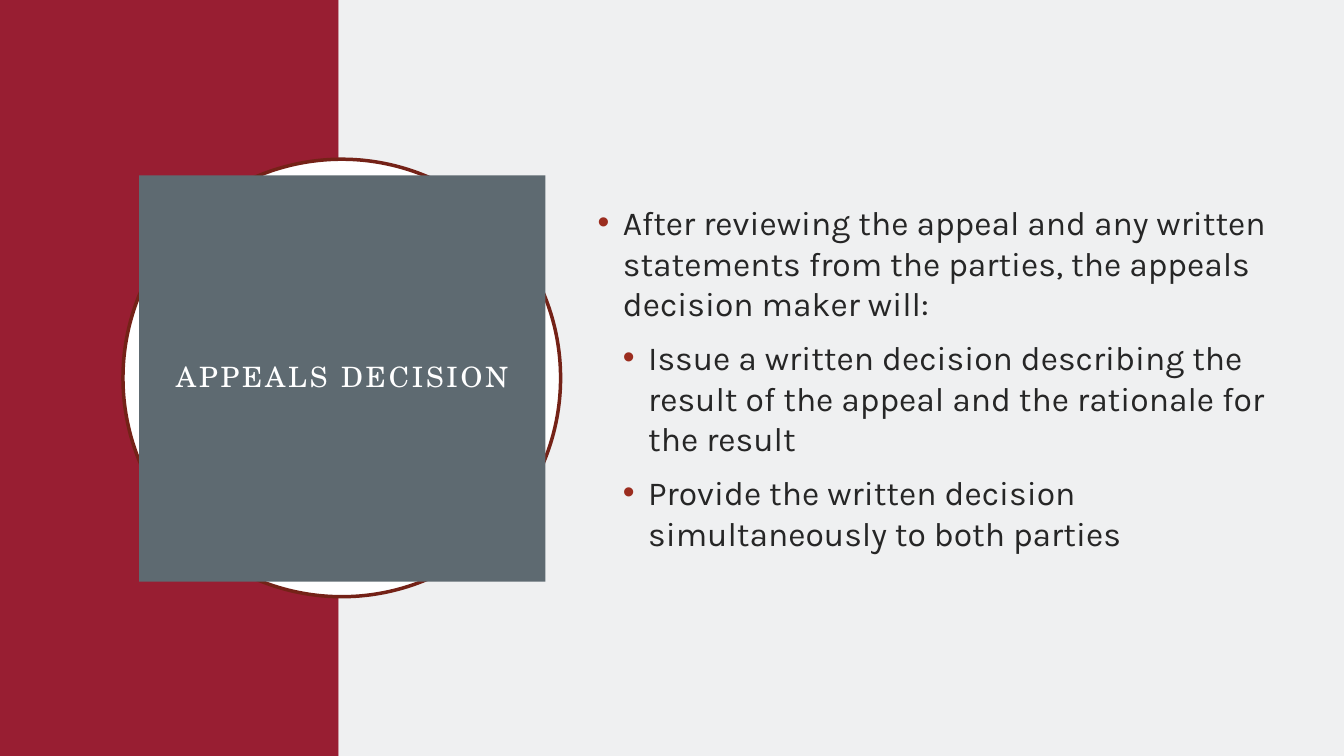
from lxml import etree
from pptx import Presentation
from pptx.dml.color import RGBColor
from pptx.enum.shapes import MSO_SHAPE
from pptx.enum.text import MSO_ANCHOR, PP_ALIGN
from pptx.oxml.ns import qn
from pptx.util import Inches, Pt

RECT, OVAL = MSO_SHAPE.RECTANGLE, MSO_SHAPE.OVAL
MIDDLE, CENTER = MSO_ANCHOR.MIDDLE, PP_ALIGN.CENTER

PALE = RGBColor(0xEF, 0xF0, 0xF1)
RED = RGBColor(0x98, 0x1E, 0x32)
WHITE = RGBColor(0xFF, 0xFF, 0xFF)
RUST = RGBColor(0x74, 0x22, 0x17)
SLATE = RGBColor(0x5E, 0x6A, 0x71)
DOT = RGBColor(0x9B, 0x2D, 0x1F)
INK = RGBColor(0x26, 0x26, 0x26)

WIDTH, HEIGHT = 13.33, 7.5
SPLIT = 3.36
INDENT = 0.25

POINTS = [
    (0, "After reviewing the appeal and any written statements from the "
        "parties, the appeals decision maker will:"),
    (1, "Issue a written decision describing the result of the appeal and "
        "the rationale for the result"),
    (1, "Provide the written decision simultaneously to both parties"),
]


def add_block(slide, kind, box, fill, line=None):
    shape = slide.shapes.add_shape(kind, *map(Inches, box))
    shape.shadow.inherit = False
    shape.fill.solid()
    shape.fill.fore_color.rgb = fill
    if line:
        shape.line.color.rgb = line
        shape.line.width = Pt(2.5)
    else:
        shape.line.fill.background()
    return shape


def set_font(font, name, size, color):
    font.name = name
    font.size = Pt(size)
    font.color.rgb = color


def add_title(shape, text):
    frame = shape.text_frame
    frame.word_wrap = True
    frame.vertical_anchor = MIDDLE
    frame.margin_left = frame.margin_right = Inches(0.2)
    frame.margin_top = frame.margin_bottom = Inches(0.2)
    frame.text = text
    para = frame.paragraphs[0]
    para.alignment = CENTER
    para.line_spacing = 0.9
    run = para.runs[0]
    set_font(run.font, "TeX Gyre Schola", 20, WHITE)
    run.font._element.set("spc", "200")


def add_bullet(para, level):
    """Give the paragraph a coloured dot and a hanging indent for its level."""
    props = para._p.get_or_add_pPr()
    props.set("marL", str(Inches(INDENT * (level + 1))))
    props.set("indent", str(-Inches(INDENT)))
    color = etree.SubElement(props, qn("a:buClr"))
    etree.SubElement(color, qn("a:srgbClr")).set("val", str(DOT))
    etree.SubElement(props, qn("a:buFont")).set("typeface", "Arial")
    etree.SubElement(props, qn("a:buChar")).set("char", "•")


def add_list(slide, box, points):
    frame = slide.shapes.add_textbox(*map(Inches, box)).text_frame
    frame.word_wrap = True
    frame.vertical_anchor = MIDDLE
    frame.text = "\n".join(text for _, text in points)
    for i, (para, (level, _)) in enumerate(zip(frame.paragraphs, points)):
        para.level = level
        if i:
            para.space_before = Pt(10)
        add_bullet(para, level)
        set_font(para.runs[0].font, "Karla", 24, INK)


def main():
    deck = Presentation()
    deck.slide_width, deck.slide_height = Inches(WIDTH), Inches(HEIGHT)
    slide = deck.slides.add_slide(deck.slide_layouts[6])
    slide.background.fill.solid()
    slide.background.fill.fore_color.rgb = PALE

    add_block(slide, RECT, (0, 0, SPLIT, HEIGHT), RED)
    add_block(slide, RECT, (SPLIT, 0, WIDTH - SPLIT, HEIGHT), PALE)
    add_block(slide, OVAL, (1.22, 1.58, 4.34, 4.34), WHITE, RUST)
    panel = add_block(slide, RECT, (1.38, 1.74, 4.03, 4.03), SLATE)
    add_title(panel, "APPEALS DECISION")
    add_list(slide, (5.83, 1, 7.01, 5.49), POINTS)

    deck.save("out.pptx")


if __name__ == "__main__":
    main()
